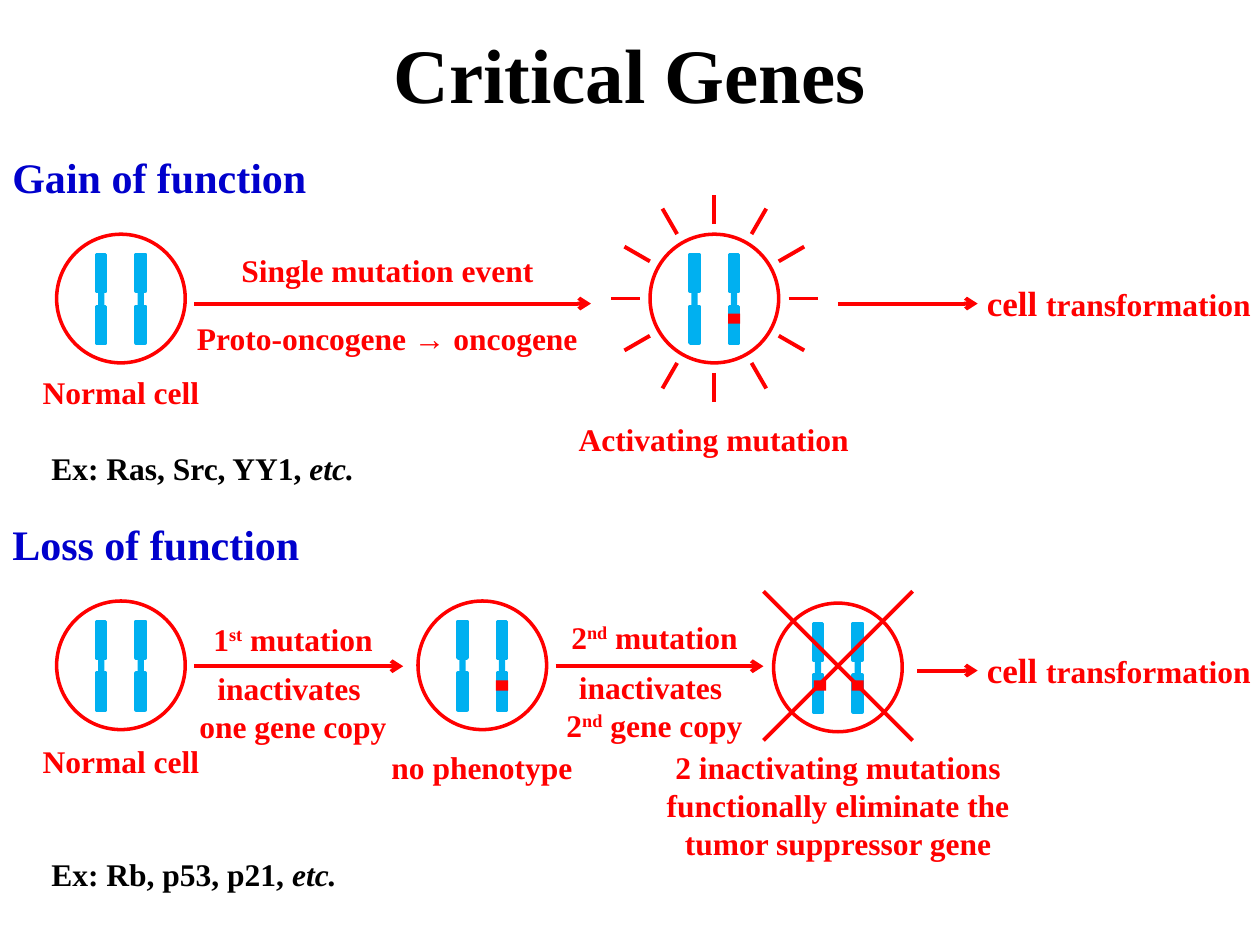
from dataclasses import dataclass
from math import cos, radians, sin

from lxml import etree
from pptx import Presentation
from pptx.dml.color import RGBColor
from pptx.enum.shapes import MSO_CONNECTOR, MSO_SHAPE
from pptx.enum.text import MSO_ANCHOR, MSO_AUTO_SIZE, PP_ALIGN
from pptx.oxml.ns import qn
from pptx.slide import Slide
from pptx.util import Pt

STRAIGHT = MSO_CONNECTOR.STRAIGHT
OVAL = MSO_SHAPE.OVAL
RECTANGLE = MSO_SHAPE.RECTANGLE
ROUNDED_RECTANGLE = MSO_SHAPE.ROUNDED_RECTANGLE
CENTER = PP_ALIGN.CENTER
LEFT = PP_ALIGN.LEFT
TOP = MSO_ANCHOR.TOP
MIDDLE = MSO_ANCHOR.MIDDLE
GROW = MSO_AUTO_SIZE.SHAPE_TO_FIT_TEXT
NO_RESIZE = MSO_AUTO_SIZE.NONE

COLORS = {"signal": "FF0000", "chromosome": "00B0F0", "heading": "0000CC", "text": "000000"}
FONT = "Times New Roman"
CELL_DIAMETER = 73.5
CHROMOSOME_OFFSET = 11.3
ARM_WIDTH, ARM_HEIGHT = 5.2, 21
NECK_WIDTH, NECK_HEIGHT = 3.6, 8
MUTATION_WIDTH, MUTATION_HEIGHT = 7, 5.8
RAY_INNER, RAY_OUTER, RAY_COUNT = 42.5, 59.3, 12


@dataclass(frozen=True)
class Span:
    text: str
    size: float = 18
    superscript: bool = False
    italic: bool = False


@dataclass(frozen=True)
class Label:
    left: float
    top: float
    width: float
    height: float
    lines: tuple[tuple[Span, ...], ...]
    color: str = "signal"
    align: PP_ALIGN = CENTER
    inset: float = 3.6
    anchor: MSO_ANCHOR = TOP


@dataclass(frozen=True)
class Cell:
    x: float
    y: float
    mutation_offsets: tuple[float, ...] = ()
    mutation_top: float = 8.6


@dataclass(frozen=True)
class Line:
    x1: float
    y1: float
    x2: float
    y2: float
    arrow: bool = False


def plain(text: str, size: float = 18) -> tuple[Span, ...]:
    return (Span(text, size),)


def ordinal(number: str, suffix: str, rest: str) -> tuple[Span, ...]:
    return Span(number), Span(suffix, superscript=True), Span(rest)


def heading(top: float, text: str) -> Label:
    return Label(0, top, 230, 36, (plain(text, 24),), "heading", LEFT)


def example(top: float, text: str) -> Label:
    return Label(22.3, top, 230, 29, ((Span(text), Span("etc.", italic=True)),), "text", LEFT)


def normal_cell(top: float) -> Label:
    return Label(10.8, top, 116.6, 21.6, (plain("Normal cell"),), inset=0)


def transformation(top: float) -> Label:
    spans = (Span("cell ", 20), Span("transformation"))
    return Label(558.7, top, 161.3, 24.5, (spans,), inset=0)


CELLS = (
    Cell(69.1, 170.6),
    Cell(408.2, 170.6, (CHROMOSOME_OFFSET,)),
    Cell(69.1, 380.2),
    Cell(275.6, 380.2, (CHROMOSOME_OFFSET,)),
    Cell(478.8, 381.4, (-10.2, CHROMOSOME_OFFSET), 7.4),
)

LINES = (
    Line(110.9, 173.5, 337.7, 173.5, True),
    Line(478.8, 173.5, 558.7, 173.5, True),
    Line(110.9, 380.7, 230.4, 380.7, True),
    Line(317.5, 380.7, 436.3, 380.7, True),
    Line(524.2, 383.2, 558.7, 383.2, True),
    Line(436.3, 337.9, 521.5, 423.1),
    Line(521.5, 337.9, 436.3, 423.1),
)

LABELS = (
    Label(0, 0, 720, 83, (plain("Critical Genes", 44),), "text", anchor=MIDDLE),
    heading(83, "Gain of function"),
    normal_cell(213.4),
    Label(110.9, 139.9, 221, 29, (plain("Single mutation event"),)),
    Label(110.9, 178.9, 221, 29, (plain("Proto-oncogene → oncogene"),)),
    Label(297.4, 236.2, 221, 29, (plain("Activating mutation"),)),
    transformation(160.8),
    example(253, "Ex: Ras, Src, YY1, "),
    heading(292.6, "Loss of function"),
    normal_cell(424.1),
    Label(108, 350.5, 118.8, 29, (ordinal("1", "st", " mutation"),)),
    Label(108, 378.9, 118.8, 51, (plain("inactivates "), plain("one gene copy"))),
    Label(216, 424.1, 118.8, 29, (plain("no phenotype"),)),
    Label(314.6, 349.5, 118.8, 29, (ordinal("2", "nd", " mutation"),)),
    Label(314.6, 378, 118.8, 51, (plain("inactivates "), ordinal("2", "nd", " gene copy"))),
    Label(365.5, 424.1, 226.8, 72.7,
          (plain("2 inactivating mutations functionally eliminate the tumor suppressor gene"),)),
    transformation(370.6),
    example(485.3, "Ex: Rb, p53, p21, "),
)


def rgb(name: str) -> RGBColor:
    return RGBColor.from_string(COLORS[name])


def draw_shape(slide: Slide, kind: MSO_SHAPE, center_x: float, top: float, width: float,
               height: float, fill: str | None = None, outline: str | None = None) -> None:
    shape = slide.shapes.add_shape(kind, Pt(center_x - width / 2), Pt(top), Pt(width), Pt(height))
    shape.shadow.inherit = False
    if kind == ROUNDED_RECTANGLE:
        shape.adjustments[0] = 0
    if fill:
        shape.fill.solid()
        shape.fill.fore_color.rgb = rgb(fill)
    else:
        shape.fill.background()
    if outline:
        shape.line.color.rgb = rgb(outline)
        shape.line.width = Pt(2)
    else:
        shape.line.fill.background()


def draw_cell(slide: Slide, cell: Cell) -> None:
    for offset in (-CHROMOSOME_OFFSET, CHROMOSOME_OFFSET):
        x = cell.x + offset
        for arm_top in (-25.2, 4.4):
            draw_shape(slide, ROUNDED_RECTANGLE, x, cell.y + arm_top, ARM_WIDTH, ARM_HEIGHT,
                       "chromosome", "chromosome")
        draw_shape(slide, RECTANGLE, x, cell.y - 4.2, NECK_WIDTH, NECK_HEIGHT, "chromosome")
    draw_shape(slide, OVAL, cell.x, cell.y - CELL_DIAMETER / 2, CELL_DIAMETER, CELL_DIAMETER,
               outline="signal")
    for offset in cell.mutation_offsets:
        draw_shape(slide, RECTANGLE, cell.x + offset, cell.y + cell.mutation_top,
                   MUTATION_WIDTH, MUTATION_HEIGHT, "signal")


def draw_line(slide: Slide, line: Line) -> None:
    connector = slide.shapes.add_connector(STRAIGHT, Pt(line.x1), Pt(line.y1), Pt(line.x2), Pt(line.y2))
    connector.line.color.rgb = rgb("signal")
    connector.line.width = Pt(2.25)
    if line.arrow:
        etree.SubElement(connector.line._get_or_add_ln(), qn("a:tailEnd"), type="arrow")
    etree.SubElement(connector._element.spPr, qn("a:effectLst"))


def draw_rays(slide: Slide, cell: Cell) -> None:
    for index in range(RAY_COUNT):
        angle = radians(index * 360 / RAY_COUNT)
        dx, dy = cos(angle), sin(angle)
        draw_line(slide, Line(cell.x + RAY_INNER * dx, cell.y + RAY_INNER * dy,
                              cell.x + RAY_OUTER * dx, cell.y + RAY_OUTER * dy))


def draw_label(slide: Slide, label: Label) -> None:
    box = slide.shapes.add_textbox(Pt(label.left), Pt(label.top), Pt(label.width), Pt(label.height))
    frame = box.text_frame
    frame.word_wrap = True
    frame.auto_size = NO_RESIZE if label.anchor == MIDDLE else GROW
    frame.vertical_anchor = label.anchor
    frame.margin_left = frame.margin_right = Pt(7.2 if label.align == LEFT else 0)
    frame.margin_top = frame.margin_bottom = Pt(label.inset)
    for index, spans in enumerate(label.lines):
        paragraph = frame.add_paragraph() if index else frame.paragraphs[0]
        paragraph.alignment = label.align
        for span in spans:
            run = paragraph.add_run()
            run.text = span.text
            run.font.name = FONT
            run.font.size = Pt(span.size)
            run.font.bold = True
            run.font.italic = span.italic
            run.font.color.rgb = rgb(label.color)
            if span.superscript:
                run._r.get_or_add_rPr().set("baseline", "30000")


def main() -> None:
    presentation = Presentation()
    presentation.slide_width, presentation.slide_height = Pt(720), Pt(540)
    slide = presentation.slides.add_slide(presentation.slide_layouts[6])
    for cell in CELLS:
        draw_cell(slide, cell)
    draw_rays(slide, CELLS[1])
    for line in LINES:
        draw_line(slide, line)
    for label in LABELS:
        draw_label(slide, label)
    presentation.save("out.pptx")


if __name__ == "__main__":
    main()
